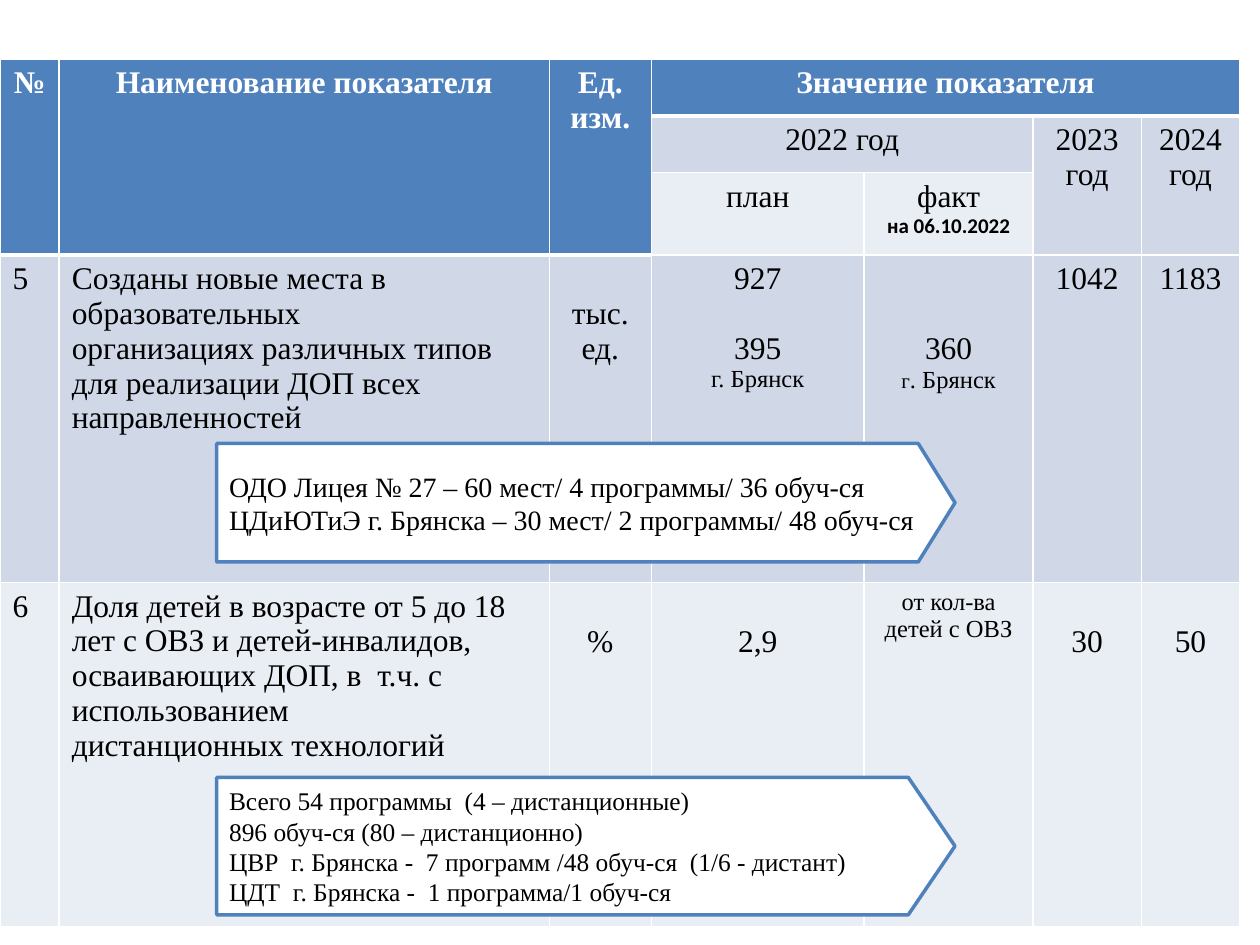
"""Build the slide with the table of target indicators for 2022-2024."""
from dataclasses import dataclass

import pptx
import pptx.dml.color
import pptx.enum.shapes
import pptx.enum.text
import pptx.oxml
import pptx.oxml.ns
import pptx.util

Inches = pptx.util.Inches
Pt = pptx.util.Pt
RGBColor = pptx.dml.color.RGBColor
ALIGN = pptx.enum.text.PP_ALIGN

BLUE = RGBColor(0x4F, 0x81, 0xBD)
BAND_DARK = RGBColor(0xD0, 0xD8, 0xE8)
BAND_LIGHT = RGBColor(0xE9, 0xED, 0xF4)
WHITE = RGBColor(0xFF, 0xFF, 0xFF)
BLACK = RGBColor(0, 0, 0)

SERIF = "Times New Roman"
LINE_HEIGHT = 20
COL_WIDTHS = [0.47, 3.89, 0.81, 1.69, 1.34, 0.86, 0.78]
ROW_HEIGHTS = [0.45, 0.45, 0.51, 2.6, 2.73]


@dataclass(frozen=True)
class Run:
    text: str
    size: float = 18
    font: str = SERIF
    bold: bool = False


@dataclass(frozen=True)
class Para:
    runs: tuple[Run, ...]
    lines_before: int = 0


@dataclass(frozen=True)
class Cell:
    row: int
    col: int
    paras: tuple[Para, ...]
    fill: RGBColor
    rows: int = 1
    cols: int = 1
    lines_above: int = 0
    align: ALIGN = ALIGN.CENTER


@dataclass(frozen=True)
class Callout:
    top: float
    height: float
    point: float
    size: float
    lines: tuple[str, ...]


def paras(*texts: str, size: float = 18, bold: bool = False) -> tuple[Para, ...]:
    return tuple(Para((Run(t, size, bold=bold),)) for t in texts)


def header(col: int, text: str, rows: int = 1, cols: int = 1) -> Cell:
    return Cell(0, col, paras(text, bold=True), BLUE, rows, cols)


CITY = Run("г. Брянск", 14)
CELLS = [
    header(0, "№", rows=3),
    header(1, "Наименование показателя", rows=3),
    header(2, "Ед. изм.", rows=3),
    header(3, "Значение показателя", cols=4),
    Cell(1, 3, paras("2022 год"), BAND_DARK, cols=2),
    Cell(1, 5, paras("2023 год"), BAND_DARK, rows=2),
    Cell(1, 6, paras("2024 год"), BAND_DARK, rows=2),
    Cell(2, 3, paras("план"), BAND_LIGHT),
    Cell(2, 4, (*paras("факт"),
                Para((Run("на 06.10.2022", 12, "Calibri", True),))), BAND_LIGHT),
    Cell(3, 0, paras("5"), BAND_DARK, align=ALIGN.LEFT),
    Cell(3, 1, paras("Созданы новые места в образовательных",
                     "организациях различных типов для реализации ДОП всех "
                     "направленностей"), BAND_DARK, align=ALIGN.LEFT),
    Cell(3, 2, paras("тыс. ед."), BAND_DARK, lines_above=1),
    Cell(3, 3, (*paras("927"), Para((Run("395"),), 1), Para((CITY,))), BAND_DARK),
    Cell(3, 4, (*paras("360"), Para((Run("г", 12), Run(". Брянск", 14)))),
         BAND_DARK, lines_above=2),
    Cell(3, 5, paras("1042"), BAND_DARK),
    Cell(3, 6, paras("1183"), BAND_DARK),
    Cell(4, 0, paras("6"), BAND_LIGHT, align=ALIGN.LEFT),
    Cell(4, 1, paras("Доля детей в возрасте от 5 до 18 лет с ОВЗ и детей-инвалидов, "
                     "осваивающих ДОП, в  т.ч. с использованием",
                     "дистанционных технологий"), BAND_LIGHT, align=ALIGN.LEFT),
    Cell(4, 2, paras("%"), BAND_LIGHT, lines_above=1),
    Cell(4, 3, paras("2,9"), BAND_LIGHT, lines_above=1),
    Cell(4, 4, paras("от кол-ва детей с ОВЗ", size=14), BAND_LIGHT),
    Cell(4, 5, paras("30"), BAND_LIGHT, lines_above=1),
    Cell(4, 6, paras("50"), BAND_LIGHT, lines_above=1),
]

CALLOUTS = [
    Callout(6.17, 1.09, 0.34, 14.5, (
        "Всего 54 программы  (4 – дистанционные)",
        "896 обуч-ся (80 – дистанционно)",
        "ЦВР  г. Брянска -  7 программ /48 обуч-ся  (1/6 - дистант)",
        "ЦДТ  г. Брянска -  1 программа/1 обуч-ся")),
    Callout(3.52, 0.94, 0.31, 16, (
        "ОДО Лицея № 27 – 60 мест/ 4 программы/ 36 обуч-ся",
        "ЦДиЮТиЭ г. Брянска – 30 мест/ 2 программы/ 48 обуч-ся")),
]


def write(tf, content: tuple[Para, ...], align: ALIGN, color: RGBColor) -> None:
    tf.word_wrap = True
    for i, para in enumerate(content):
        p = tf.add_paragraph() if i else tf.paragraphs[0]
        p.alignment = align
        if para.lines_before:
            p.space_before = Pt(para.lines_before * LINE_HEIGHT)
        for run in para.runs:
            r = p.add_run()
            r.text = run.text
            r.font.size = Pt(run.size)
            r.font.name = run.font
            r.font.bold = run.bold
            r.font.color.rgb = color


def set_borders(cell, bottom: float) -> None:
    tc_pr = cell._tc.get_or_add_tcPr()
    for side, width in zip("LRTB", (1, 1, 1, bottom)):
        tc_pr.append(pptx.oxml.parse_xml(
            f'<a:ln{side} {pptx.oxml.ns.nsdecls("a")} w="{Pt(width)}">'
            f'<a:solidFill><a:srgbClr val="{WHITE}"/></a:solidFill></a:ln{side}>'))


def draw_cell(table, spec: Cell) -> None:
    last_row, last_col = spec.row + spec.rows - 1, spec.col + spec.cols - 1
    for row in range(spec.row, last_row + 1):
        for col in range(spec.col, last_col + 1):
            part = table.cell(row, col)
            set_borders(part, 3 if spec.fill == BLUE else 1)
            part.fill.solid()
            part.fill.fore_color.rgb = spec.fill
    cell = table.cell(spec.row, spec.col)
    if spec.rows * spec.cols > 1:
        cell.merge(table.cell(last_row, last_col))
    cell.margin_top = Inches(0.05) + Pt(spec.lines_above * LINE_HEIGHT)
    write(cell.text_frame, spec.paras, spec.align,
          WHITE if spec.fill == BLUE else BLACK)


def draw_table(s) -> None:
    table = s.shapes.add_table(
        len(ROW_HEIGHTS), len(COL_WIDTHS), Inches(0), Inches(0.47),
        Inches(sum(COL_WIDTHS)), Inches(sum(ROW_HEIGHTS))).table
    for column, width in zip(table.columns, COL_WIDTHS):
        column.width = Inches(width)
    for row, height in zip(table.rows, ROW_HEIGHTS):
        row.height = Inches(height)
    for spec in CELLS:
        draw_cell(table, spec)


def draw_callout(s, spec: Callout) -> None:
    sp = s.shapes.add_shape(
        pptx.enum.shapes.MSO_SHAPE.PENTAGON, Inches(1.72), Inches(spec.top),
        Inches(5.86), Inches(spec.height))
    sp.adjustments[0] = spec.point
    sp.shadow.inherit = False
    sp.fill.solid()
    sp.fill.fore_color.rgb = WHITE
    sp.line.color.rgb = BLUE
    sp.line.width = Pt(2)
    sp.text_frame.vertical_anchor = pptx.enum.text.MSO_ANCHOR.MIDDLE
    write(sp.text_frame, paras(*spec.lines, size=spec.size), ALIGN.LEFT, BLACK)


def main() -> None:
    prs = pptx.Presentation()
    prs.slide_width, prs.slide_height = Inches(10), Inches(7.5)
    s = prs.slides.add_slide(prs.slide_layouts[6])
    draw_table(s)
    for spec in CALLOUTS:
        draw_callout(s, spec)
    prs.save("out.pptx")


if __name__ == "__main__":
    main()
